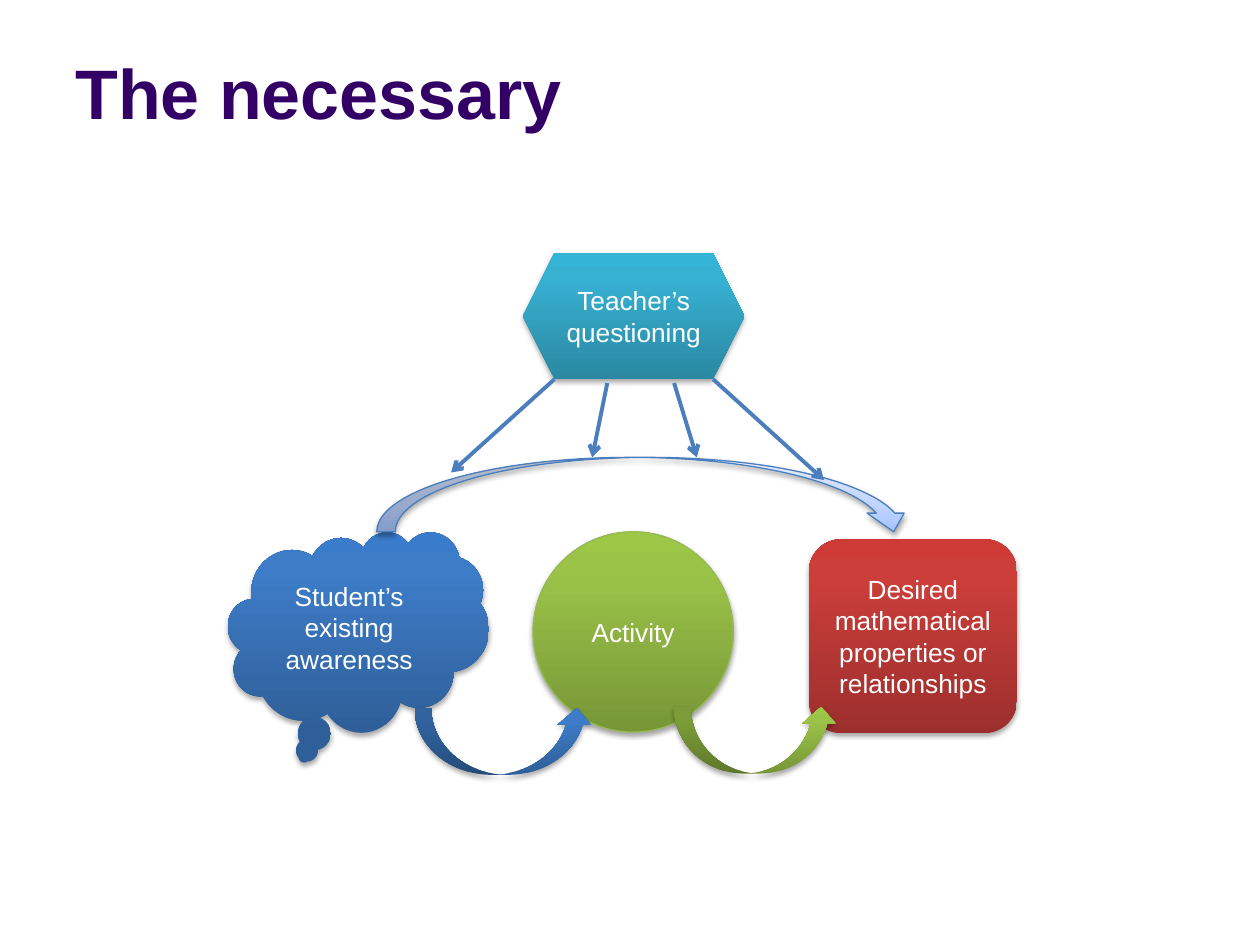
from copy import deepcopy

from lxml import etree
from pptx import Presentation, util as u
from pptx.dml import color
from pptx.enum import shapes, text
from pptx.oxml import ns

deck = Presentation()
deck.slide_width, deck.slide_height = u.Inches(10), u.Inches(7.5)
COL, ROW = deck.slide_width / 100, deck.slide_height / 75
slide = deck.slides.add_slide(deck.slide_layouts[6])


def paint(target, hex_code):
    target.rgb = color.RGBColor.from_string(hex_code)


def grid(*cells):
    return [round(cell * unit) for cell, unit in zip(cells, (COL, ROW) * 2)]


title = slide.shapes.add_textbox(*grid(5, 3, 90, 8.5)).text_frame
title.word_wrap = True
title.vertical_anchor = text.MSO_ANCHOR.MIDDLE
title.text = "The necessary"
heading = title.paragraphs[0].runs[0].font
heading.name, heading.size, heading.bold = "Arial", u.Pt(40), True
paint(heading.color, "330066")

KIND = shapes.MSO_SHAPE
BLUE = [(0, "2F5F99"), (0.8, "3D7CC7"), (1, "3A7CCB")]
GREEN = [(0, "779737"), (0.8, "9BC348"), (1, "9DC746")]
RED = [(0, "9C2F2D"), (0.8, "CB3E3A"), (1, "CE3B37")]
TEAL = [(0, "2A88A2"), (0.8, "37B1D2"), (1, "34B4D6")]
PALE = [(0, "A4C4FF"), (0.35, "BFD4FF"), (1, "E6EEFF")]

diagram = [
    (KIND.CLOUD_CALLOUT, (18.1, 42.2, 20.7, 15.9), BLUE, None, "Student’s existing awareness"),
    (KIND.OVAL, (42.3, 42.2, 15.9, 15.9), GREEN, "98B955", "Activity"),
    (KIND.ROUNDED_RECTANGLE, (64.2, 42.8, 16.5, 15.4), RED, None,
     "Desired mathematical properties or relationships"),
    (KIND.CURVED_UP_ARROW, (32.9, 56.2, 14.2, 5.3), BLUE, None, ""),
    (KIND.CURVED_UP_ARROW, (53.5, 56.1, 13, 5.3), GREEN, None, ""),
    (KIND.HEXAGON, (41.5, 20.1, 17.6, 10), TEAL, None, "Teacher’s questioning"),
    (KIND.CURVED_DOWN_ARROW, (29.9, 36.3, 42.5, 5.9), PALE, "4B7EBC", ""),
]
for kind, cells, stops, outline, words in diagram:
    part = slide.shapes.add_shape(kind, *grid(*cells))
    part.fill.gradient()
    part.fill.gradient_angle = 90
    stop_list = part.element.spPr.find(".//" + ns.qn("a:gsLst"))
    stop_list.append(deepcopy(stop_list[-1]))
    for stop, (position, shade) in zip(part.fill.gradient_stops, stops):
        stop.position = position
        paint(stop.color, shade)
    if outline:
        part.line.width = u.Pt(0.75)
        paint(part.line.color, outline)
    else:
        part.line.fill.background()
    part.shadow.inherit = False
    effects = part.element.spPr.find(ns.qn("a:effectLst"))
    shadow = etree.SubElement(effects, ns.qn("a:outerShdw"), blurRad=str(u.Pt(3.1)),
                              dist=str(u.Pt(1.8)), dir="5400000", rotWithShape="0")
    black = etree.SubElement(shadow, ns.qn("a:srgbClr"), val="000000")
    etree.SubElement(black, ns.qn("a:alpha"), val="35000")
    if words:
        label = part.text_frame
        label.word_wrap = True
        label.vertical_anchor = text.MSO_ANCHOR.MIDDLE
        label.text = words
        label.paragraphs[0].alignment = text.PP_ALIGN.CENTER
        lettering = label.paragraphs[0].runs[0].font
        lettering.name, lettering.size = "Arial", u.Pt(15)
        paint(lettering.color, "FFFFFF")

questions = [
    (44, 30.1, 35.8, 37.5),
    (48.2, 30.4, 47, 36.3),
    (53.5, 30.4, 55.3, 36.3),
    (56.6, 30.1, 65.4, 38.1),
]
for ends in questions:
    prompt = slide.shapes.add_connector(shapes.MSO_CONNECTOR.STRAIGHT, *grid(*ends))
    prompt.line.width = u.Pt(2.25)
    paint(prompt.line.color, "4B7EBC")
    etree.SubElement(prompt.line._get_or_add_ln(), ns.qn("a:tailEnd"), type="arrow")
    etree.SubElement(prompt._element.spPr, ns.qn("a:effectLst"))

deck.save("out.pptx")
